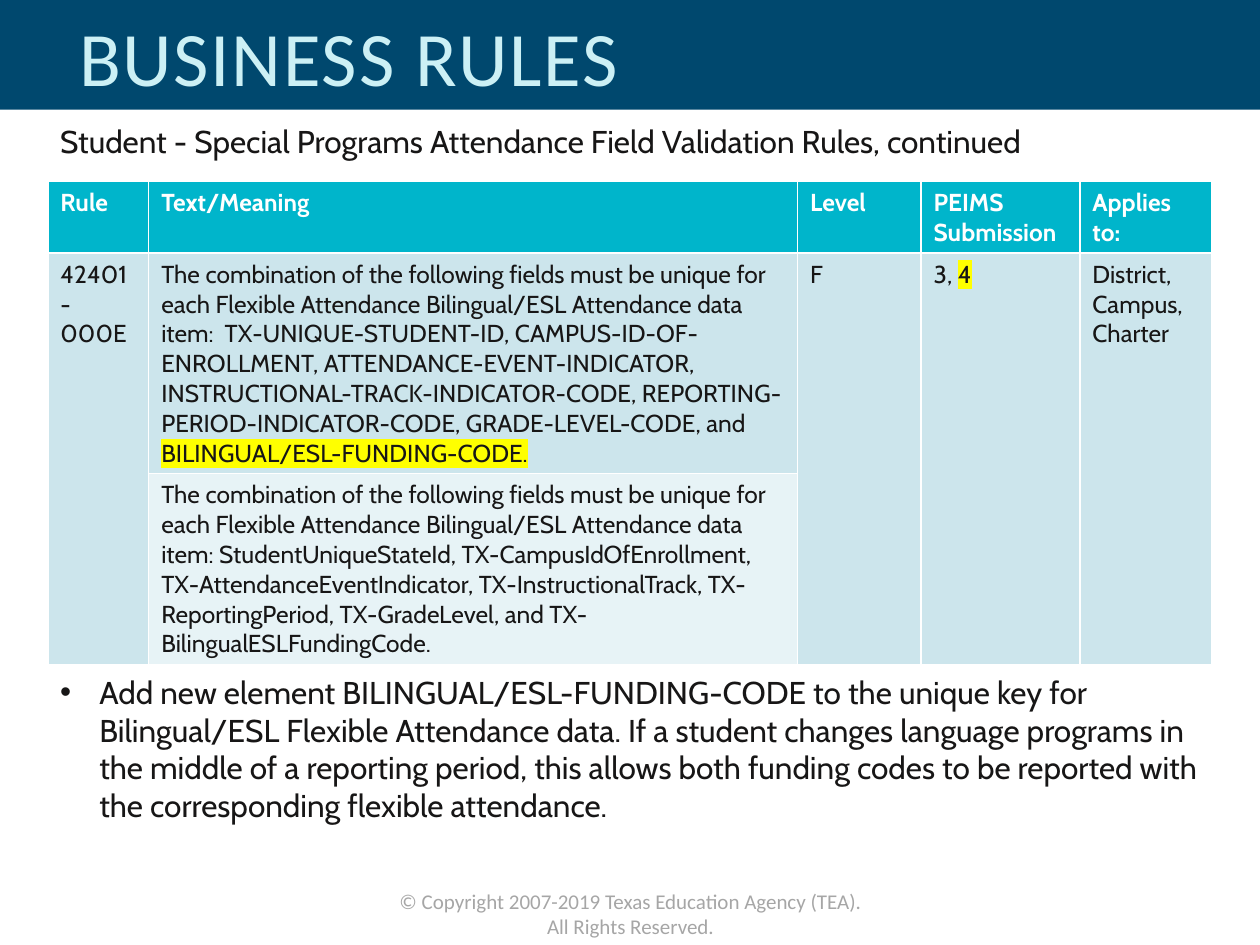
import pptx
import pptx.dml.color
import pptx.enum.shapes
import pptx.enum.text
import pptx.oxml.ns
import pptx.util
from lxml import etree

TITLE = "BUSINESS RULES"
SUBTITLE = "Student - Special Programs Attendance Field Validation Rules, continued"
COPYRIGHT = "© Copyright 2007-2019 Texas Education Agency (TEA). All Rights Reserved."
NOTE = (
    "Add new element BILINGUAL/ESL-FUNDING-CODE to the unique key for "
    "Bilingual/ESL Flexible Attendance data. If a student changes language "
    "programs in the middle of a reporting period, this allows both funding "
    "codes to be reported with the corresponding flexible attendance."
)
COMBINATION = (
    "The combination of the following fields must be unique for each "
    "Flexible Attendance Bilingual/ESL Attendance data item: "
)
RULE_TEXT = COMBINATION + (
    " TX-UNIQUE-STUDENT-ID, CAMPUS-ID-OF-ENROLLMENT, ATTENDANCE-EVENT-INDICATOR, "
    "INSTRUCTIONAL-TRACK-INDICATOR-CODE, REPORTING-PERIOD-INDICATOR-CODE, "
    "GRADE-LEVEL-CODE, and "
)
RULE_MEANING = COMBINATION + (
    "StudentUniqueStateId, TX-CampusIdOfEnrollment, TX-AttendanceEventIndicator, "
    "TX-InstructionalTrack, TX-ReportingPeriod, TX-GradeLevel, and "
    "TX-BilingualESLFundingCode."
)
# A cell is a list of paragraphs; a (plain, marked) pair ends in highlighted text.
# None continues the cell above.
ROWS = [
    [["Rule"], ["Text/Meaning"], ["Level"], ["PEIMS", "Submission"], ["Applies to:"]],
    [["42401-000E"], [(RULE_TEXT, "BILINGUAL/ESL-FUNDING-CODE.")], ["F"],
     [("3, ", "4")], ["District,", "Campus,", "Charter"]],
    [None, [RULE_MEANING], None, None, None],
]
COL_WIDTHS = [0.8, 5.15, 0.98, 1.26, 1.05]
ROW_HEIGHTS = [0.57, 1.75, 1.52]
LEFT, TABLE_TOP, CONTENT_W = 0.38, 1.44, 9.23

THEME = {
    "head_font": "Calibri", "body_font": "Cabin",
    "title_size": 44, "body_size": 18, "table_size": 14, "footer_size": 12,
    "band": "00486E", "title": "CCF0F5", "text": "171616", "footer": "A6A6A6",
    "header_text": "FFFFFF", "highlight": "FFFF00",
    "row_fills": ["00B5CB", "CCE5EC", "E7F3F6"],
}

inches = pptx.util.Inches
rgb = pptx.dml.color.RGBColor.from_string


def set_font(p, font, size, color, bold=False):
    p.font.name = THEME[font]
    p.font.size = pptx.util.Pt(THEME[size])
    p.font.color.rgb = rgb(THEME[color])
    p.font.bold = bold


def add_text(slide, box, text, font, size, color):
    tf = slide.shapes.add_textbox(*map(inches, box)).text_frame
    tf.word_wrap = True
    p = tf.paragraphs[0]
    p.text = text
    set_font(p, font, size, color)
    return tf


def add_bullet(p, indent):
    pPr = p._p.get_or_add_pPr()
    pPr.set("marL", str(inches(indent)))
    pPr.set("indent", str(-inches(indent)))
    font = etree.Element(pptx.oxml.ns.qn("a:buFont"), typeface="Arial")
    char = etree.Element(pptx.oxml.ns.qn("a:buChar"), char="•")
    pPr.insert(0, font)
    pPr.insert(1, char)


def highlight(r):
    rPr = r._r.get_or_add_rPr()
    mark = etree.SubElement(rPr, pptx.oxml.ns.qn("a:highlight"))
    etree.SubElement(mark, pptx.oxml.ns.qn("a:srgbClr"), val=THEME["highlight"])


def fill_cell(cell, paragraphs, header):
    tf = cell.text_frame
    for i, content in enumerate(paragraphs):
        p = tf.add_paragraph() if i else tf.paragraphs[0]
        plain, marked = content if isinstance(content, tuple) else (content, "")
        p.add_run().text = plain
        if marked:
            r = p.add_run()
            r.text = marked
            highlight(r)
        set_font(p, "body_font", "table_size", "header_text" if header else "text", header)


def add_rules_table(slide):
    box = (LEFT, TABLE_TOP, CONTENT_W, sum(ROW_HEIGHTS))
    table = slide.shapes.add_table(
        len(ROWS), len(COL_WIDTHS), *map(inches, box)).table
    table.horz_banding = False
    for col, width in zip(table.columns, COL_WIDTHS):
        col.width = inches(width)
    for i, (row, height) in enumerate(zip(ROWS, ROW_HEIGHTS)):
        table.rows[i].height = inches(height)
        for j, paragraphs in enumerate(row):
            cell = table.cell(i, j)
            cell.fill.solid()
            cell.fill.fore_color.rgb = rgb(THEME["row_fills"][i])
            if paragraphs is None:
                table.cell(i - 1, j).merge(cell)
            else:
                fill_cell(cell, paragraphs, header=i == 0)


def main():
    prs = pptx.Presentation()
    prs.slide_width, prs.slide_height = inches(10), inches(7.5)
    slide = prs.slides.add_slide(prs.slide_layouts[6])

    band = slide.shapes.add_shape(
        pptx.enum.shapes.MSO_SHAPE.RECTANGLE, 0, 0, prs.slide_width, inches(0.87))
    band.shadow.inherit = False
    band.fill.solid()
    band.fill.fore_color.rgb = rgb(THEME["band"])
    band.line.fill.background()

    tf = add_text(slide, (3.04, 7, 3.93, 0.3), COPYRIGHT,
                  "head_font", "footer_size", "footer")
    tf.paragraphs[0].alignment = pptx.enum.text.PP_ALIGN.CENTER

    tf = add_text(slide, (0.53, 0.05, 8.28, 0.87), TITLE,
                  "head_font", "title_size", "title")
    tf.vertical_anchor = pptx.enum.text.MSO_ANCHOR.MIDDLE
    p = tf.paragraphs[0]
    p.line_spacing = 0.9
    p.runs[0]._r.get_or_add_rPr().set("spc", "100")

    add_rules_table(slide)
    add_text(slide, (LEFT, 0.92, 8.2, 0.4), SUBTITLE, "body_font", "body_size", "text")

    tf = add_text(slide, (LEFT, 5.29, CONTENT_W, 1.31), NOTE,
                  "body_font", "body_size", "text")
    add_bullet(tf.paragraphs[0], 0.31)

    prs.save("out.pptx")


if __name__ == "__main__":
    main()
